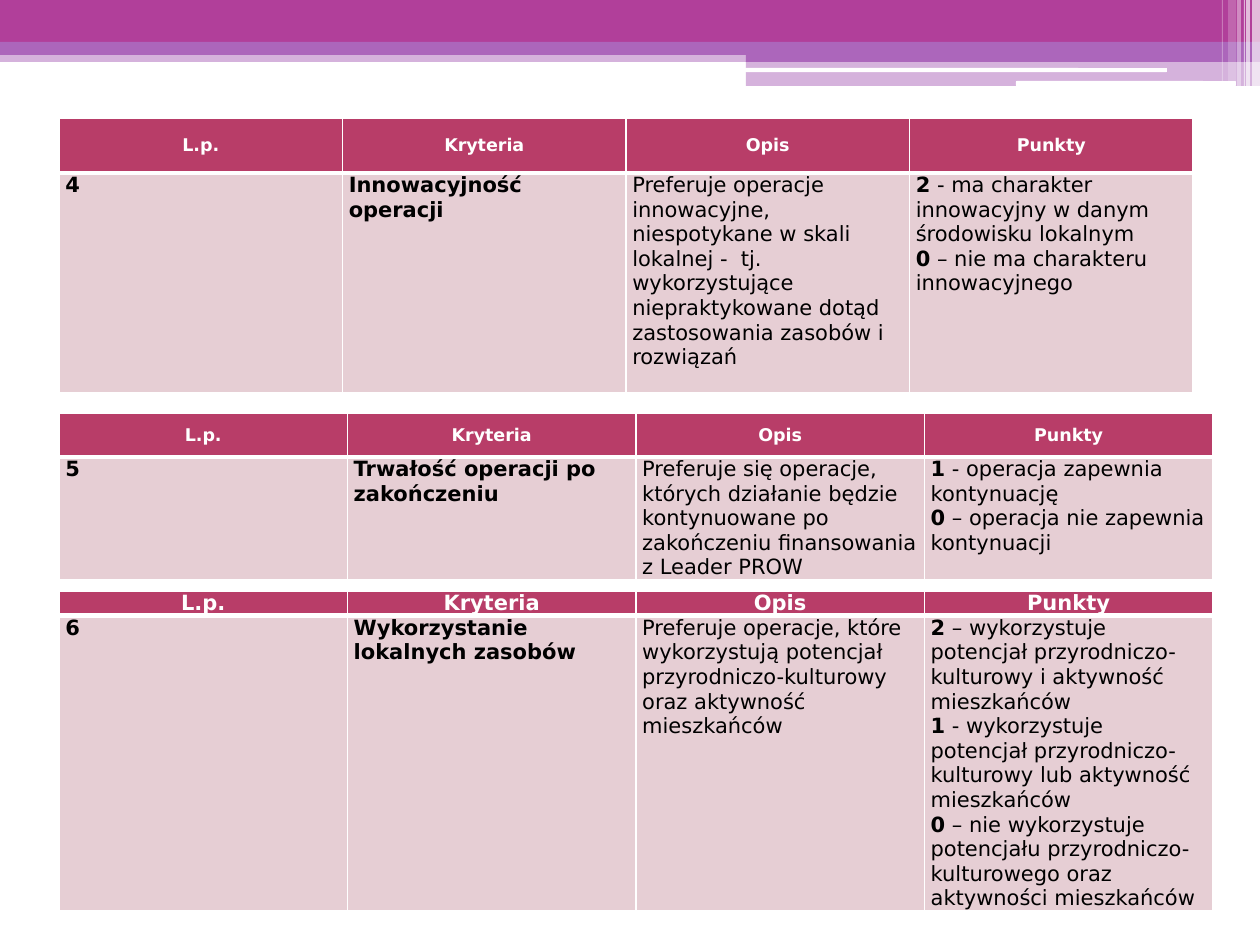
import pptx
import pptx.util
import pptx.dml.color
import pptx.enum.shapes
import pptx.enum.text
import pptx.oxml
import pptx.oxml.ns

PX = 914400 / 126
FONT = "DejaVu Sans"
WHITE, PINK, ROSE = "FFFFFF", "B83D68", "E6CED4"
PLUM, LILAC = "B13F9A", "AC66BB"
KIND = pptx.enum.shapes.MSO_SHAPE
HEADS = ("L.p.", "Kryteria", "Opis", "Punkty")

# Bars of the top band: left, top, width, height, colour, opacity in percent
BARS = [
    (0, 50, 1260, 12, LILAC, 50),
    (0, 0, 1260, 42, PLUM, 100),
    (0, 42, 1260, 13, LILAC, 100),
    (746, 49, 514, 13, LILAC, 100),
    (746, 61, 514, 25, LILAC, 50),
]
PILLS = [(745, 68, 422, 4), (1016, 81, 220, 5)]
# White stripes at the right edge: left, width, height, opacity
STRIPES = [
    (1252, 8, 86, 65), (1246, 4, 86, 65), (1244, 1, 86, 60),
    (1237, 4, 86, 40), (1228, 8, 81, 20), (1222, 1, 81, 30),
]

# Tables: top, column width, row heights, full height, header size,
# then number, name, description and points (score, meaning)
TABLES = [
    (118, 283.5, (55, 220), 276, 10, "4", "Innowacyjność operacji",
     "Preferuje operacje innowacyjne, niespotykane w skali lokalnej -  tj. "
     "wykorzystujące niepraktykowane dotąd zastosowania zasobów i rozwiązań",
     [("2", " - ma charakter innowacyjny w danym środowisku lokalnym"),
      ("0", " – nie ma charakteru innowacyjnego")]),
    (413, 288.5, (44, 48), 170, 10, "5", "Trwałość operacji po zakończeniu",
     "Preferuje się operacje, których działanie będzie kontynuowane po "
     "zakończeniu finansowania z Leader PROW",
     [("1", " - operacja zapewnia kontynuację"),
      ("0", " – operacja nie zapewnia kontynuacji")]),
    (591, 288.5, (23, 275), 328, 12, "6", "Wykorzystanie lokalnych zasobów",
     "Preferuje operacje, które wykorzystują potencjał "
     "przyrodniczo-kulturowy oraz aktywność mieszkańców",
     [("2", " – wykorzystuje potencjał przyrodniczo-kulturowy i aktywność "
       "mieszkańców"),
      ("1", " - wykorzystuje potencjał przyrodniczo-kulturowy lub aktywność "
       "mieszkańców"),
      ("0", " – nie wykorzystuje potencjału przyrodniczo-kulturowego oraz "
       "aktywności mieszkańców")]),
]


def emu(px):
    return pptx.util.Emu(round(px * PX))


def paint(fill, tint):
    fill.solid()
    fill.fore_color.rgb = pptx.dml.color.RGBColor.from_string(tint)


def add_bar(slide, left, top, width, height, tint, alpha=100,
            kind=KIND.RECTANGLE):
    bar = slide.shapes.add_shape(
        kind, emu(left), emu(top), emu(width), emu(height))
    bar.shadow.inherit = False
    bar.line.fill.background()
    paint(bar.fill, tint)
    if alpha < 100:
        color = bar.fill._xPr.find(".//" + pptx.oxml.ns.qn("a:srgbClr"))
        color.append(pptx.oxml.parse_xml(
            f'<a:alpha {pptx.oxml.ns.nsdecls("a")} val="{alpha * 1000}"/>'))
    return bar


def add_edges(cell, low):
    """White cell borders; low is the width of the bottom one in points."""
    props = cell._tc.get_or_add_tcPr()
    for side, width in (("L", 1), ("R", 1), ("T", 1), ("B", low)):
        props.append(pptx.oxml.parse_xml(
            f'<a:ln{side} {pptx.oxml.ns.nsdecls("a")} w="{width * 12700}">'
            f'<a:solidFill><a:srgbClr val="{WHITE}"/></a:solidFill>'
            f'</a:ln{side}>'))


def fill_cell(cell, paras, size, head=False):
    """Each paragraph is a pair: bold text, plain text."""
    cell.margin_left = cell.margin_right = pptx.util.Inches(0.05)
    cell.margin_top = cell.margin_bottom = 0
    add_edges(cell, 3 if head else 1)
    paint(cell.fill, PINK if head else ROSE)
    anchor = pptx.enum.text.MSO_ANCHOR
    cell.vertical_anchor = anchor.MIDDLE if head else anchor.TOP
    align = pptx.enum.text.PP_ALIGN
    frame = cell.text_frame
    for i, pair in enumerate(paras):
        para = frame.add_paragraph() if i else frame.paragraphs[0]
        para.alignment = align.CENTER if head else align.LEFT
        for text, bold in zip(pair, (True, False)):
            if text:
                run = para.add_run()
                run.text = text
                run.font.name = FONT
                run.font.size = pptx.util.Pt(size)
                run.font.bold = bold
                paint(run.font.fill, WHITE if head else "000000")


def add_grid(slide, top, width, rows, height, size, num, name, about, points):
    frame = slide.shapes.add_table(
        2, 4, emu(59), emu(top), emu(4 * width), emu(height))
    table = frame.table
    table.horz_banding = False
    for col in table.columns:
        col.width = emu(width)
    for row, tall in zip(table.rows, rows):
        row.height = emu(tall)
    frame.height = emu(height)
    body = ([(num, "")], [(name, "")], [("", about)], points)
    for i, (title, paras) in enumerate(zip(HEADS, body)):
        fill_cell(table.cell(0, i), [(title, "")], size, head=True)
        fill_cell(table.cell(1, i), paras, 12)


def main():
    deck = pptx.Presentation()
    deck.slide_width, deck.slide_height = emu(1260), emu(945)
    slide = deck.slides.add_slide(deck.slide_layouts[6])

    # Top band
    for bar in BARS:
        add_bar(slide, *bar)
    for pill in PILLS:
        add_bar(slide, *pill, WHITE, kind=KIND.ROUNDED_RECTANGLE)
    for left, width, height, alpha in STRIPES:
        add_bar(slide, left, 0, width, height, WHITE, alpha)

    # Criteria tables
    for table in TABLES:
        add_grid(slide, *table)

    deck.save("out.pptx")


if __name__ == "__main__":
    main()
